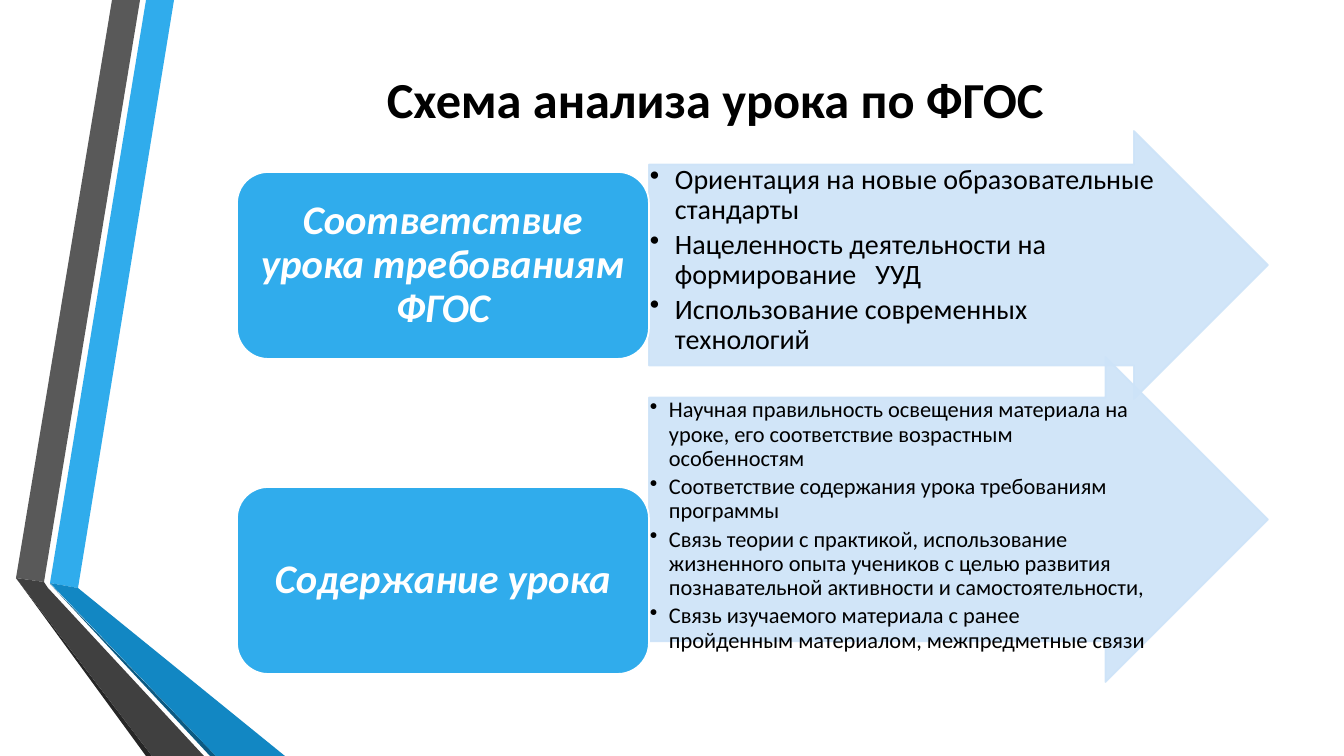
from lxml import etree
from pptx import Presentation
from pptx.dml.color import RGBColor
from pptx.enum.shapes import MSO_SHAPE
from pptx.enum.text import MSO_ANCHOR, MSO_AUTO_SIZE, PP_ALIGN
from pptx.oxml.ns import qn
from pptx.util import Pt

PX = 914400 / 100.8
FONT = "Calibri"
ARROW, ROUNDED = MSO_SHAPE.RIGHT_ARROW, MSO_SHAPE.ROUNDED_RECTANGLE
TOP, MIDDLE = MSO_ANCHOR.TOP, MSO_ANCHOR.MIDDLE
LEFT, CENTER = PP_ALIGN.LEFT, PP_ALIGN.CENTER
NO_AUTOFIT = MSO_AUTO_SIZE.NONE

COLORS = {
    "black": "000000",
    "white": "FFFFFF",
    "blue": "30ACEC",
    "blue_fold": "1287C3",
    "blue_edge": "0C5A82",
    "grey": "595959",
    "grey_fold": "404040",
    "grey_edge": "262626",
    "pale": "CDE3F8",
}

RIBBONS = [
    ("blue", [(50, 583), (78, 588), (174, 0), (146, 0)]),
    ("grey", [(140, 0), (112, 0), (16, 578), (44, 582)]),
    ("grey_edge", [(16, 578), (146, 756), (152, 756)]),
    ("blue_edge", [(50, 584), (210, 756), (216, 756)]),
    ("blue_fold", [(50, 583), (216, 756), (285, 756), (78, 588)]),
    ("grey_fold", [(204, 756), (48, 588), (44, 582), (16, 578), (152, 756)]),
]

BOX_LEFT, BOX_WIDTH, BOX_HEIGHT = 237, 412, 187
ARROW_LEFT, ARROW_WIDTH = BOX_LEFT + BOX_WIDTH, 619

# heading, box top, arrow top, arrow height, text size, bullet indent, points
SECTIONS = [
    ("Соответствие урока требованиям ФГОС", 172, 131, 268, 20, 25, [
        "Ориентация на новые образовательные стандарты",
        "Нацеленность деятельности на формирование   УУД",
        "Использование современных технологий",
    ]),
    ("Содержание урока", 487, 357, 325, 16, 19, [
        "Научная правильность освещения материала на уроке, его соответствие "
        "возрастным особенностям",
        "Соответствие содержания урока требованиям программы",
        "Связь теории с практикой, использование жизненного опыта учеников с "
        "целью развития познавательной активности и самостоятельности,",
        "Связь изучаемого материала с ранее пройденным материалом, "
        "межпредметные связи",
    ]),
]


def px(length):
    return round(length * PX)


def color(name):
    return RGBColor.from_string(COLORS[name])


def set_fill(shape, name):
    shape.fill.solid()
    shape.fill.fore_color.rgb = color(name)
    shape.shadow.inherit = False


def make_translucent(shape, percent):
    """Give the fill and the line of the shape the same opacity."""
    for tone in shape._element.spPr.iter(qn("a:srgbClr")):
        etree.SubElement(tone, qn("a:alpha"), val=str(percent * 1000))


def add_ribbon(slide, name, points):
    builder = slide.shapes.build_freeform(*points[0], scale=PX)
    builder.add_line_segments(points[1:], close=True)
    ribbon = builder.convert_to_shape()
    set_fill(ribbon, name)
    ribbon.line.fill.background()


def add_panel(slide, kind, left, top, width, height, fill, line):
    panel = slide.shapes.add_shape(kind, px(left), px(top), px(width), px(height))
    set_fill(panel, fill)
    panel.line.color.rgb = color(line)
    panel.line.width = Pt(1.25)
    return panel


def set_frame(shape, anchor, left, top, right, bottom):
    frame = shape.text_frame
    frame.word_wrap = True
    frame.auto_size = NO_AUTOFIT
    frame.vertical_anchor = anchor
    frame.margin_left, frame.margin_top = px(left), px(top)
    frame.margin_right, frame.margin_bottom = px(right), px(bottom)
    return frame


def format_paragraph(para, text, size, name, align, bold=False, italic=False):
    para.text = text
    para.alignment = align
    font = para.font
    font.name, font.size = FONT, Pt(size)
    font.bold, font.italic = bold, italic
    font.color.rgb = color(name)


def add_bullet(para, indent):
    properties = para._p.get_or_add_pPr()
    properties.set("marL", str(px(indent)))
    properties.set("indent", str(-px(indent)))
    bullet = etree.Element(qn("a:buChar"), char="•")
    properties.find(qn("a:defRPr")).addprevious(bullet)


def add_heading(slide, text, top):
    box = add_panel(slide, ROUNDED, BOX_LEFT, top, BOX_WIDTH, BOX_HEIGHT,
                    "blue", "white")
    para = set_frame(box, MIDDLE, 12, 6, 12, 6).paragraphs[0]
    format_paragraph(para, text, 29, "white", CENTER, bold=True, italic=True)
    para.line_spacing = 0.9


def add_point_arrow(slide, top, height, size, indent, points):
    arrow = add_panel(slide, ARROW, ARROW_LEFT, top, ARROW_WIDTH, height,
                      "pale", "pale")
    arrow.adjustments[0], arrow.adjustments[1] = 0.75, 0.5
    make_translucent(arrow, 90)
    frame = set_frame(arrow, TOP, 1, 1, 1, 1)
    for index, point in enumerate(points):
        para = frame.add_paragraph() if index else frame.paragraphs[0]
        format_paragraph(para, point, size, "black", LEFT)
        para.line_spacing = 0.9
        para.space_after = Pt(3)
        add_bullet(para, indent)


def set_title(slide, text):
    title = slide.shapes.title
    title.left, title.top = px(163), px(76)
    title.width, title.height = px(1105), px(97)
    para = set_frame(title, MIDDLE, 10, 0, 10, 52).paragraphs[0]
    format_paragraph(para, text, 36, "black", CENTER, bold=True)


def main():
    deck = Presentation()
    deck.slide_width, deck.slide_height = px(1344), px(756)
    slide = deck.slides.add_slide(deck.slide_layouts[5])
    for name, points in RIBBONS:
        add_ribbon(slide, name, points)
    set_title(slide, "Схема анализа урока по ФГОС")
    for heading, box_top, arrow_top, height, size, indent, points in SECTIONS:
        add_point_arrow(slide, arrow_top, height, size, indent, points)
        add_heading(slide, heading, box_top)
    deck.save("out.pptx")


if __name__ == "__main__":
    main()
